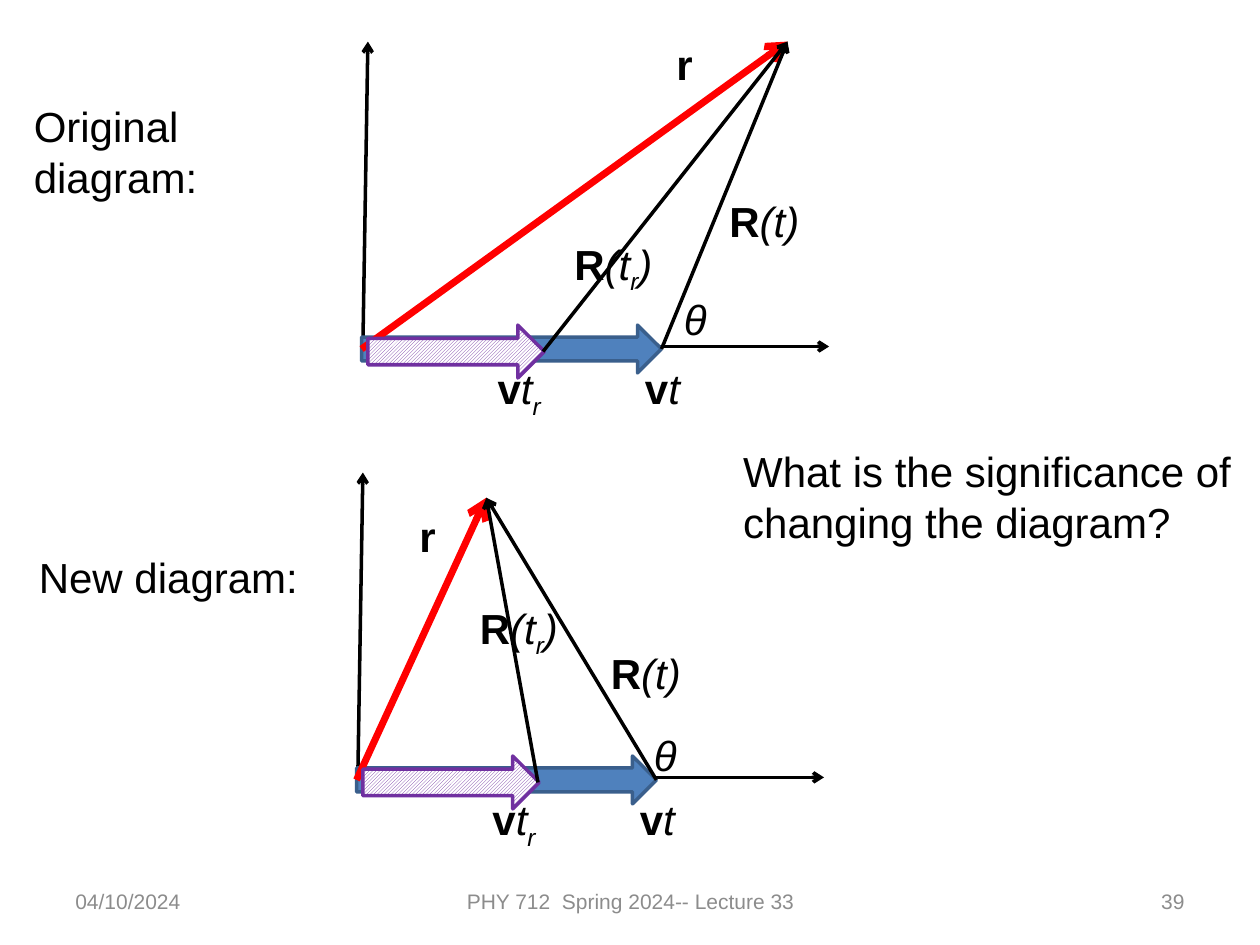
from typing import NamedTuple

import pptx
import pptx.dml.color
import pptx.enum.dml
import pptx.enum.shapes
import pptx.enum.text
import pptx.oxml
import pptx.oxml.ns
import pptx.util

Inches = pptx.util.Inches
Pt = pptx.util.Pt
RGBColor = pptx.dml.color.RGBColor
PP_ALIGN = pptx.enum.text.PP_ALIGN
MSO_ANCHOR = pptx.enum.text.MSO_ANCHOR

BLACK = RGBColor(0x00, 0x00, 0x00)
WHITE = RGBColor(0xFF, 0xFF, 0xFF)
RED = RGBColor(0xFF, 0x00, 0x00)
GRAY = RGBColor(0x8C, 0x8C, 0x8C)
BLUE = RGBColor(0x4F, 0x81, 0xBD)
DARK_BLUE = RGBColor(0x3A, 0x5F, 0x8C)
PURPLE = RGBColor(0x70, 0x30, 0xA0)


class Point(NamedTuple):
    x: float
    y: float


class Run(NamedTuple):
    text: str
    bold: bool = False
    italic: bool = False
    subscript: bool = False


class Diagram(NamedTuple):
    shift: Point
    tip: Point
    r_label: Point
    now_label: Point
    retarded_label: Point


VECTOR_R = [Run("r", bold=True)]
VT = [Run("v", bold=True), Run("t", italic=True)]
VTR = VT + [Run("r", italic=True, subscript=True)]
R_NOW = [Run("R", bold=True), Run("(t)", italic=True)]
R_RETARDED = [Run("R", bold=True), Run("(t", italic=True),
              Run("r", italic=True, subscript=True), Run(")", italic=True)]
THETA = [Run("θ", italic=True)]

ORIGINAL = Diagram(Point(0, 0), Point(6.25, 0.33), Point(5.27, 0.26),
                   Point(5.69, 1.5), Point(4.46, 1.84))
NEW = Diagram(Point(-0.04, 3.42), Point(3.86, 3.95), Point(3.23, 4),
              Point(4.75, 5.09), Point(3.71, 4.73))


def add_text(shapes, runs: list[Run], at: Point, width: float = 0.98,
             height: float = 0.5, *, size: int = 24, color: RGBColor = BLACK,
             align=PP_ALIGN.LEFT, anchor=MSO_ANCHOR.TOP, grow: bool = True) -> None:
    sp = shapes.add_textbox(Inches(at.x), Inches(at.y), Inches(width), Inches(height))
    tf = sp.text_frame
    tf.word_wrap = True
    tf.vertical_anchor = anchor
    if grow:
        tf.auto_size = pptx.enum.text.MSO_AUTO_SIZE.SHAPE_TO_FIT_TEXT
    p = tf.paragraphs[0]
    p.alignment = align
    for run in runs:
        r = p.add_run()
        r.text = run.text
        r.font.name = "Arial"
        r.font.size = Pt(size)
        r.font.color.rgb = color
        r.font.bold = run.bold
        r.font.italic = run.italic
        if run.subscript:
            r._r.get_or_add_rPr().set("baseline", "-25000")


def add_vector(shapes, start: Point, end: Point, color: RGBColor = BLACK,
               weight: float = 2) -> None:
    line = shapes.add_connector(
        pptx.enum.shapes.MSO_CONNECTOR.STRAIGHT,
        Inches(start.x), Inches(start.y), Inches(end.x), Inches(end.y))
    line.line.color.rgb = color
    line.line.width = Pt(weight)
    ln = line.line._get_or_add_ln()
    tail = pptx.oxml.parse_xml(
        f'<a:tailEnd {pptx.oxml.ns.nsdecls("a")} type="arrow"/>')
    ln.append(tail)
    effects = pptx.oxml.parse_xml(f'<a:effectLst {pptx.oxml.ns.nsdecls("a")}/>')
    line._element.spPr.append(effects)


def add_block_arrow(shapes, at: Point, width: float, height: float,
                    fill: RGBColor, outline: RGBColor, hatched: bool = False) -> None:
    sp = shapes.add_shape(pptx.enum.shapes.MSO_SHAPE.RIGHT_ARROW, Inches(at.x),
                          Inches(at.y), Inches(width), Inches(height))
    sp.shadow.inherit = False
    if hatched:
        sp.fill.patterned()
        sp.fill.pattern = pptx.enum.dml.MSO_PATTERN.DARK_UPWARD_DIAGONAL
        sp.fill.fore_color.rgb = fill
        sp.fill.back_color.rgb = WHITE
    else:
        sp.fill.solid()
        sp.fill.fore_color.rgb = fill
    sp.line.color.rgb = outline
    sp.line.width = Pt(2)


def add_diagram(shapes, d: Diagram) -> None:
    def moved(x: float, y: float) -> Point:
        return Point(x + d.shift.x, y + d.shift.y)

    origin = moved(2.88, 2.75)
    add_vector(shapes, origin, moved(2.92, 0.33))
    add_vector(shapes, origin, moved(6.58, 2.75))
    add_block_arrow(shapes, moved(2.87, 2.58), 2.38, 0.38, BLUE, DARK_BLUE)
    add_text(shapes, VT, moved(5.02, 2.83))
    add_vector(shapes, moved(2.87, 2.77), d.tip, RED, 4)
    add_text(shapes, VECTOR_R, d.r_label)
    add_vector(shapes, moved(5.25, 2.77), d.tip)
    add_text(shapes, R_NOW, d.now_label)
    add_block_arrow(shapes, moved(2.92, 2.58), 1.4, 0.42, PURPLE, PURPLE, hatched=True)
    add_text(shapes, VTR, moved(3.85, 2.83))
    add_vector(shapes, moved(4.31, 2.79), d.tip)
    add_text(shapes, R_RETARDED, d.retarded_label)


def main() -> None:
    prs = pptx.Presentation()
    prs.slide_width = Inches(10)
    prs.slide_height = Inches(7.5)
    s = prs.slides.add_slide(prs.slide_layouts[6])

    for text, x, width, align in (
            ("04/10/2024", 0.5, 2.33, PP_ALIGN.LEFT),
            ("PHY 712  Spring 2024-- Lecture 33", 3.42, 3.17, PP_ALIGN.CENTER),
            ("39", 7.17, 2.33, PP_ALIGN.RIGHT)):
        add_text(s.shapes, [Run(text)], Point(x, 6.95), width, 0.4, size=12,
                 color=GRAY, align=align, anchor=MSO_ANCHOR.MIDDLE, grow=False)

    add_diagram(s.shapes.add_group_shape().shapes, ORIGINAL)
    add_text(s.shapes, [Run("Original diagram:")], Point(0.17, 0.75), 2.33, 0.91)
    add_diagram(s.shapes, NEW)
    add_text(s.shapes, [Run("New diagram:")], Point(0.21, 4.33), 2.33)
    add_text(s.shapes, [Run("What is the significance of changing the diagram?")],
             Point(5.8, 3.49), 4.4, 1.31)
    for at in (Point(5.33, 2.28), Point(5.09, 5.74)):
        add_text(s.shapes, THETA, at, 0.42)

    prs.save("out.pptx")


if __name__ == "__main__":
    main()
